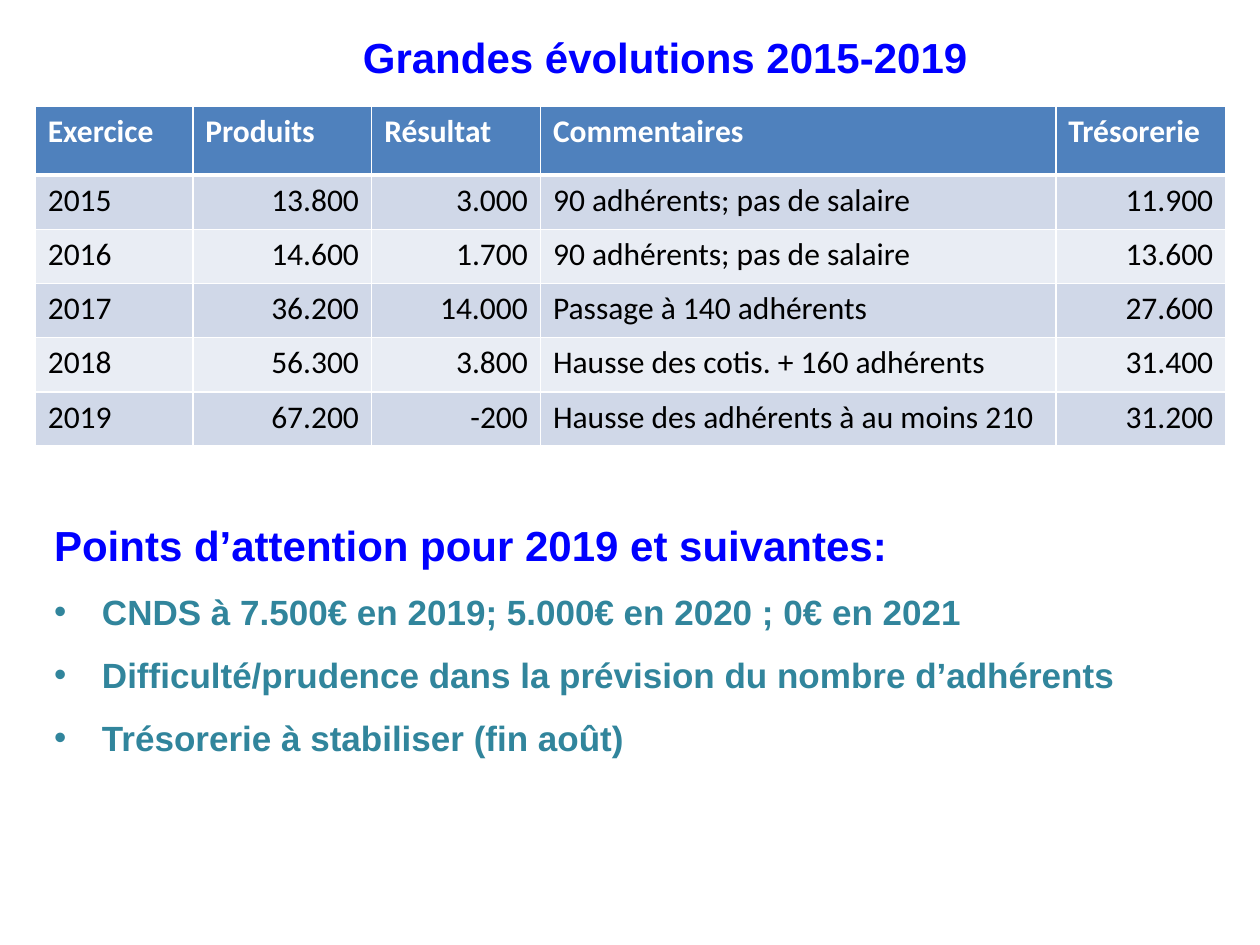
import pptx
import pptx.util
import pptx.dml.color
import pptx.enum.text
import pptx.oxml
import pptx.oxml.ns

Inches = pptx.util.Inches
Pt = pptx.util.Pt
RGB = pptx.dml.color.RGBColor
ALIGN = pptx.enum.text.PP_ALIGN
ANCHOR = pptx.enum.text.MSO_ANCHOR

BLUE = RGB(0x00, 0x00, 0xFF)
TEAL = RGB(0x31, 0x85, 0x9C)
HEAD = RGB(0x4F, 0x81, 0xBD)
BANDS = (RGB(0xD0, 0xD8, 0xE8), RGB(0xE9, 0xED, 0xF4))
WHITE = RGB(0xFF, 0xFF, 0xFF)
BLACK = RGB(0x00, 0x00, 0x00)

COLS = (1.25, 1.42, 1.34, 4.09, 1.35)
RIGHT = (1, 2, 4)
ROWS = (
    ("Exercice", "Produits", "Résultat", "Commentaires", "Trésorerie"),
    ("2015", "13.800", "3.000", "90 adhérents; pas de salaire", "11.900"),
    ("2016", "14.600", "1.700", "90 adhérents; pas de salaire", "13.600"),
    ("2017", "36.200", "14.000", "Passage à 140 adhérents", "27.600"),
    ("2018", "56.300", "3.800", "Hausse des cotis. + 160 adhérents", "31.400"),
    ("2019", "67.200", "-200", "Hausse des adhérents à au moins 210", "31.200"),
)
POINTS = (
    "CNDS à 7.500€ en 2019; 5.000€ en 2020 ; 0€ en 2021",
    "Difficulté/prudence dans la prévision du nombre d’adhérents",
    "Trésorerie à stabiliser (fin août)",
)


def add_xml(parent, tag, inner="", **attrs):
    """Append a DrawingML element to parent."""
    pairs = "".join(f' {key}="{val}"' for key, val in attrs.items())
    space = pptx.oxml.ns.nsdecls("a")
    parent.append(pptx.oxml.parse_xml(f"<a:{tag} {space}{pairs}>{inner}</a:{tag}>"))


def write(para, text, size=18, font="Arial", color=BLACK, bold=True,
          align=ALIGN.LEFT, lines=None, bullet=False):
    para.alignment = align
    if lines:
        para.line_spacing = lines
    if bullet:
        props = para._p.get_or_add_pPr()
        props.set("marL", str(Inches(0.38)))
        props.set("indent", str(Inches(-0.38)))
        add_xml(props, "buFont", typeface="Arial")
        add_xml(props, "buChar", char="•")
    run = para.add_run()
    run.text = text
    run.font.size = Pt(size)
    run.font.name = font
    run.font.bold = bold
    run.font.color.rgb = color


def add_box(slide, left, top, width, height, anchor=ANCHOR.TOP):
    """Add a wrapping text box without margins and return its frame."""
    box = slide.shapes.add_textbox(
        Inches(left), Inches(top), Inches(width), Inches(height))
    frame = box.text_frame
    frame.word_wrap = True
    frame.vertical_anchor = anchor
    frame.margin_left = frame.margin_right = 0
    frame.margin_top = frame.margin_bottom = 0
    return frame


def set_edges(cell, top, bottom):
    """Draw white cell borders; top and bottom are widths in points."""
    props = cell._tc.get_or_add_tcPr()
    line = f'<a:solidFill><a:srgbClr val="{WHITE}"/></a:solidFill>'
    for tag, width in (("lnL", 1), ("lnR", 1), ("lnT", top), ("lnB", bottom)):
        add_xml(props, tag, line, w=Pt(width))


def add_grid(slide):
    table = slide.shapes.add_table(
        len(ROWS), len(COLS), Inches(0.28), Inches(0.84),
        Inches(sum(COLS)), Inches(2.7)).table
    for col, width in zip(table.columns, COLS):
        col.width = Inches(width)
    for r, texts in enumerate(ROWS):
        head = r == 0
        table.rows[r].height = Inches(0.55 if head else 0.43)
        for c, text in enumerate(texts):
            cell = table.cell(r, c)
            set_edges(cell, 3 if r == 1 else 1, 3 if head else 1)
            cell.fill.solid()
            cell.fill.fore_color.rgb = HEAD if head else BANDS[(r - 1) % 2]
            write(cell.text_frame.paragraphs[0], text, font="Calibri",
                  color=WHITE if head else BLACK, bold=head,
                  align=ALIGN.RIGHT if c in RIGHT and not head else ALIGN.LEFT)


def main():
    deck = pptx.Presentation()
    deck.slide_width, deck.slide_height = Inches(10), Inches(7.5)
    slide = deck.slides.add_slide(deck.slide_layouts[6])

    title = add_box(slide, 1.46, 0.22, 7.64, 0.46, ANCHOR.MIDDLE)
    write(title.paragraphs[0], "Grandes évolutions 2015-2019",
          size=24, color=BLUE, align=ALIGN.CENTER)

    add_grid(slide)

    notes = add_box(slide, 0.43, 3.92, 8.9, 2.25)
    write(notes.paragraphs[0], "Points d’attention pour 2019 et suivantes:",
          size=24, color=BLUE, lines=1.5)
    for text in POINTS:
        write(notes.add_paragraph(), text, size=20, color=TEAL,
              lines=1.5, bullet=True)

    deck.save("out.pptx")


if __name__ == "__main__":
    main()
